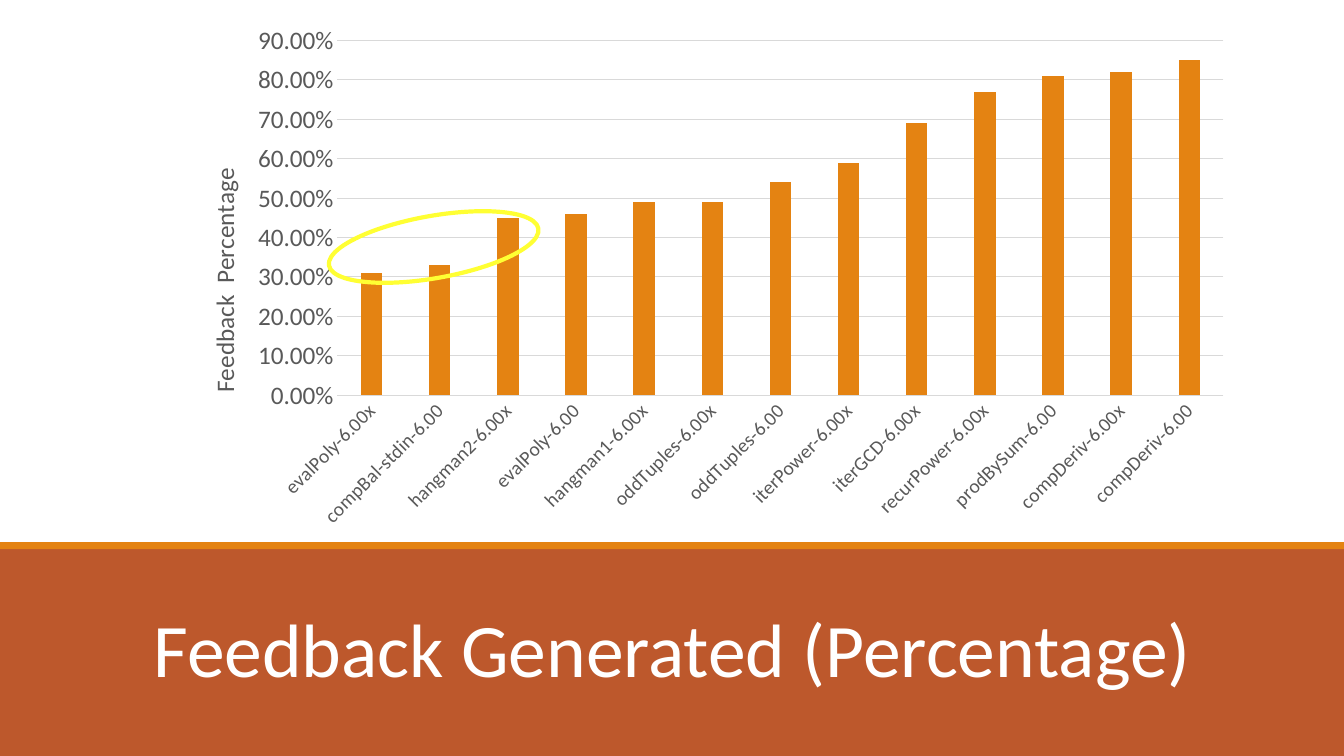
from lxml import etree
from pptx import Presentation
from pptx import util as u
from pptx.chart.data import CategoryChartData
from pptx.dml.color import RGBColor
from pptx.enum import chart as ch, shapes, text
from pptx.oxml import parse_xml
from pptx.oxml.ns import nsdecls, qn

COLORS = {"rust": "BD582C", "orange": "E48312", "white": "FFFFFF",
          "grey": "595959", "grid": "D9D9D9", "yellow": "FFFF33"}
FONT = "Calibri"
FEEDBACK = {
    "evalPoly-6.00x": 0.31, "compBal-stdin-6.00": 0.33, "hangman2-6.00x": 0.45,
    "evalPoly-6.00": 0.46, "hangman1-6.00x": 0.49, "oddTuples-6.00x": 0.49,
    "oddTuples-6.00": 0.54, "iterPower-6.00x": 0.59, "iterGCD-6.00x": 0.69,
    "recurPower-6.00x": 0.77, "prodBySum-6.00": 0.81, "compDeriv-6.00x": 0.82,
    "compDeriv-6.00": 0.85,
}


def color(name):
    return RGBColor.from_string(COLORS[name])


def style_font(font, size, name="grey"):
    font.name, font.size, font.bold = FONT, u.Pt(size), False
    font.color.rgb = color(name)


def style_line(line, name, width):
    line.color.rgb = color(name)
    line.width = u.Pt(width)


def manual_layout(inner=False, **fractions):
    """Return a c:layout element placed by fractions of the chart area."""
    parts = ['<c:layoutTarget val="inner"/>'] if inner else []
    parts += [f'<c:{k}Mode val="edge"/>' for k in ("x", "y")]
    parts += [f'<c:{k} val="{v}"/>' for k, v in fractions.items()]
    return parse_xml(f'<c:layout {nsdecls("c")}><c:manualLayout>'
                     f'{"".join(parts)}</c:manualLayout></c:layout>')


class Deck:
    def __init__(self, width, height):
        self.prs = Presentation()
        self.prs.slide_width, self.prs.slide_height = u.Cm(width), u.Cm(height)
        self.s = self.prs.slides.add_slide(self.prs.slide_layouts[5])

    def shape(self, kind, box, fill=None, line=None, width=3, rotation=0):
        sp = self.s.shapes.add_shape(kind, *map(u.Cm, box))
        sp.shadow.inherit = False
        sp.rotation = rotation
        if fill:
            sp.fill.solid()
            sp.fill.fore_color.rgb = color(fill)
        else:
            sp.fill.background()
        if line:
            style_line(sp.line, line, width)
        else:
            sp.line.fill.background()

    def title(self, words, box, size):
        sp = self.s.shapes.title
        sp.left, sp.top, sp.width, sp.height = map(u.Cm, box)
        sp.element.getparent().append(sp.element)  # in front of the bands
        tf = sp.text_frame
        tf.word_wrap, tf.auto_size = True, text.MSO_AUTO_SIZE.NONE
        tf.vertical_anchor = text.MSO_ANCHOR.BOTTOM
        tf.margin_left = tf.margin_right = u.Cm(0.25)
        tf.margin_top = tf.margin_bottom = 0
        p = tf.paragraphs[0]
        p.alignment, p.line_spacing = text.PP_ALIGN.CENTER, 0.85
        r = p.add_run()
        r.text = words
        style_font(r.font, size, "white")
        r.font.element.set("spc", "-50") if hasattr(r.font, "element") else None

    def column_chart(self, values, axis_title, box):
        data = CategoryChartData(number_format="0.00%")
        data.categories = list(values)
        data.add_series("Series 1", list(values.values()))
        chart = self.s.shapes.add_chart(
            ch.XL_CHART_TYPE.COLUMN_CLUSTERED, *map(u.Cm, box), data).chart
        chart.has_legend = chart.has_title = False
        style_font(chart.font, 10)
        plot = chart.plots[0]
        plot.gap_width, plot.overlap, plot.vary_by_categories = 219, -27, False
        fill = plot.series[0].format.fill
        fill.solid()
        fill.fore_color.rgb = color("orange")

        cat, val = chart.category_axis, chart.value_axis
        for axis, size in ((cat, 14), (val, 18)):
            axis.major_tick_mark = axis.minor_tick_mark = ch.XL_TICK_MARK.NONE
            style_font(axis.tick_labels.font, size)
        style_line(cat.format.line, "grid", 0.75)
        val.format.line.fill.background()
        style_line(val.major_gridlines.format.line, "grid", 0.75)
        val.minimum_scale, val.maximum_scale, val.major_unit = 0, 0.9, 0.1
        val.tick_labels.number_format = "0.00%"
        val.tick_labels.number_format_is_linked = False
        p = val.axis_title.text_frame.paragraphs[0]
        r = p.add_run()
        r.text = axis_title
        style_font(r.font, 18)
        self.place_chart_parts(chart.element)

    def place_chart_parts(self, root):
        """Turn the axis texts and fix the plot area and axis title in place."""
        for path, angle in (("//c:catAx/c:txPr/a:bodyPr", -45),
                            ("//c:valAx/c:title//a:bodyPr", -90)):
            body = root.xpath(path)[0]
            body.set("rot", str(angle * 60000))
            body.set("vert", "horz")
        for old in root.xpath("//c:plotArea/c:layout | //c:valAx/c:title/c:layout"):
            old.getparent().remove(old)
        root.xpath("//c:plotArea")[0].insert(
            0, manual_layout(inner=True, x=0.153, y=0.05, w=0.826, h=0.677))
        root.xpath("//c:valAx/c:title/c:tx")[0].addnext(
            manual_layout(x=0.027, y=0.285))


def main():
    deck = Deck(33.87, 19.05)
    rect = shapes.MSO_SHAPE.RECTANGLE
    deck.shape(rect, (0, 13.77, 33.87, 5.28), fill="rust")
    deck.shape(rect, (0, 13.66, 33.87, 0.18), fill="orange")
    deck.title("Feedback Generated (Percentage)", (2.9, 15.16, 28.09, 2.29), 54)
    deck.column_chart(FEEDBACK, "Feedback  Percentage", (4.37, 0.36, 27.03, 13.21))
    deck.shape(shapes.MSO_SHAPE.OVAL, (8.25, 5.44, 5.36, 1.57),
               line="yellow", rotation=-10)
    deck.prs.save("out.pptx")


if __name__ == "__main__":
    main()
